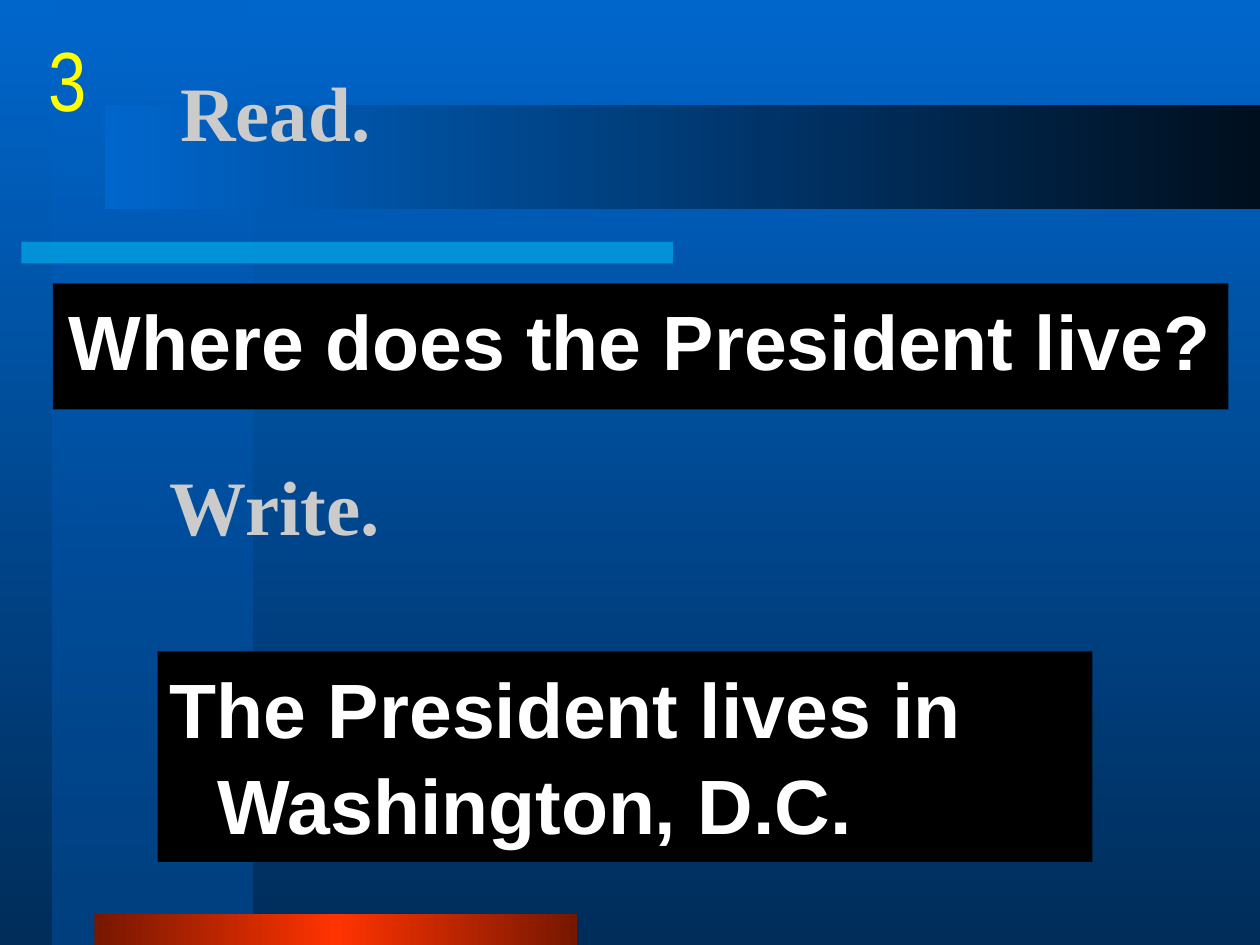
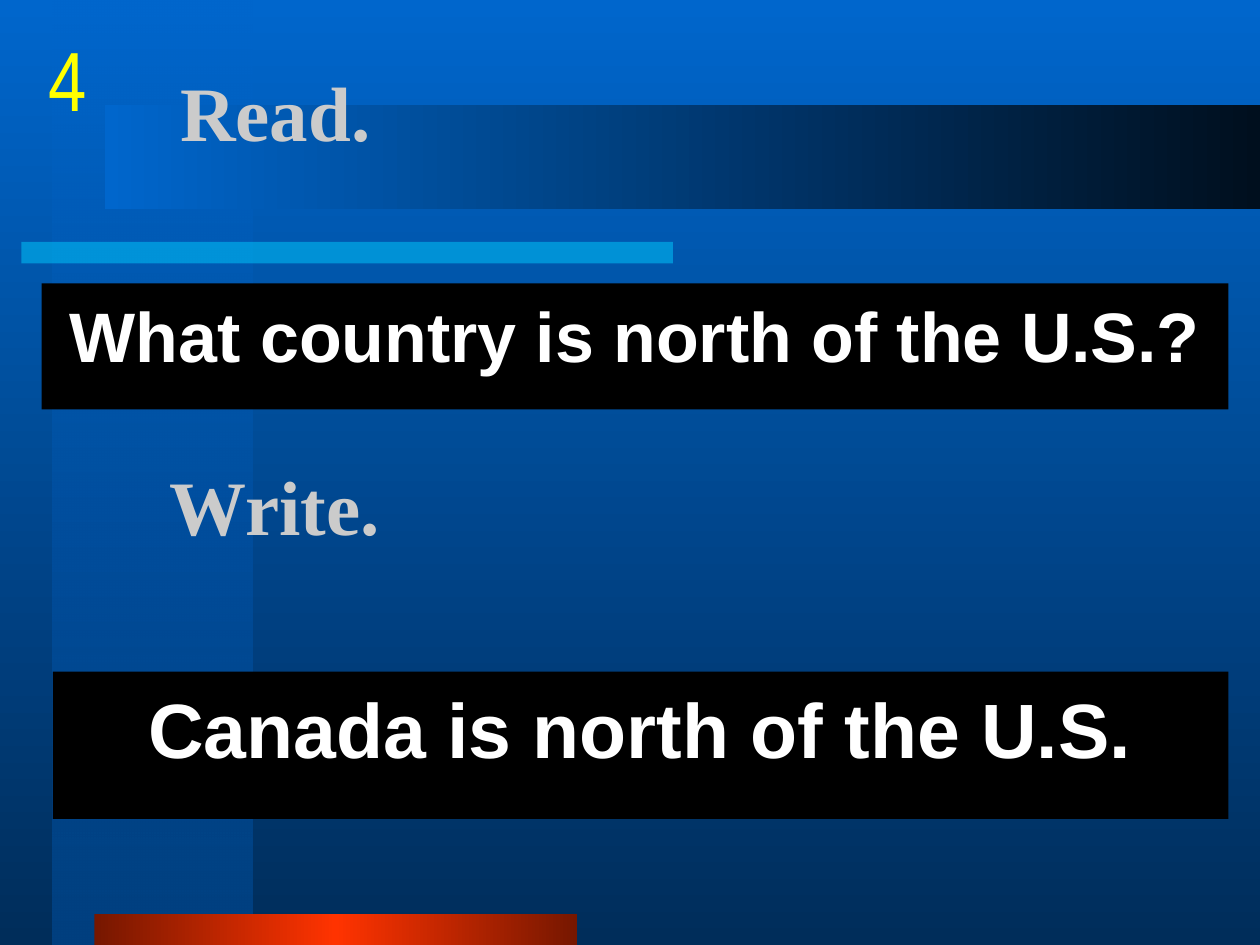
from dataclasses import dataclass

from lxml import etree
from pptx import Presentation
from pptx.dml.color import RGBColor
from pptx.dml.fill import FillFormat
from pptx.enum.shapes import MSO_SHAPE
from pptx.enum.text import MSO_ANCHOR, MSO_AUTO_SIZE, PP_ALIGN
from pptx.oxml.ns import qn
from pptx.shapes.autoshape import Shape
from pptx.slide import Slide, SlideLayout
from pptx.util import Inches, Pt

RECTANGLE = MSO_SHAPE.RECTANGLE
TOP, MIDDLE = MSO_ANCHOR.TOP, MSO_ANCHOR.MIDDLE
LEFT, CENTER = PP_ALIGN.LEFT, PP_ALIGN.CENTER
NO_AUTOFIT = MSO_AUTO_SIZE.NONE

BLUE = RGBColor(0x00, 0x66, 0xCC)
NAVY = RGBColor(0x00, 0x2D, 0x5A)
COLUMN_BLUE = RGBColor(0x00, 0x40, 0x80)
MIDNIGHT = RGBColor(0x00, 0x0F, 0x1E)
CYAN = RGBColor(0x00, 0xCC, 0xFF)
RED = RGBColor(0xFF, 0x33, 0x00)
DARK_RED = RGBColor(0x76, 0x17, 0x00)
BLACK = RGBColor(0x00, 0x00, 0x00)
WHITE = RGBColor(0xFF, 0xFF, 0xFF)
SILVER = RGBColor(0xCB, 0xCB, 0xCB)
YELLOW = RGBColor(0xFF, 0xFF, 0x00)

TITLE_ONLY = 5
HANGING_INDENT = Inches(0.38)


@dataclass(frozen=True)
class Area:
    left: float
    top: float
    width: float
    height: float

    def lengths(self) -> tuple[Inches, Inches, Inches, Inches]:
        return (Inches(self.left), Inches(self.top),
                Inches(self.width), Inches(self.height))


@dataclass(frozen=True)
class Band:
    area: Area
    colours: tuple[RGBColor, ...]
    angle: int = 0
    first_opacity: int = 100


@dataclass(frozen=True)
class TextStyle:
    font: str
    size: int
    colour: RGBColor
    bold: bool = True
    align: PP_ALIGN = LEFT
    anchor: MSO_ANCHOR = MIDDLE


@dataclass(frozen=True)
class Sentence:
    text: str
    area: Area
    size: int = 44
    align: PP_ALIGN = CENTER


@dataclass(frozen=True)
class Exercise:
    number: int
    question: Sentence
    answer: Sentence


BANDS = (
    Band(Area(0.42, 0, 1.58, 7.5), (BLUE, COLUMN_BLUE), 90, 50),
    Band(Area(0.17, 1.92, 5.17, 0.17), (CYAN,), first_opacity=50),
    Band(Area(0.75, 7.25, 3.83, 0.25), (DARK_RED, RED, DARK_RED)),
    Band(Area(0.83, 0.83, 9.17, 0.83), (BLUE, MIDNIGHT)),
)
READ_AREA = Area(1.33, 0.25, 8.5, 1.25)
WRITE_AREA = Area(1.25, 3.17, 8.5, 1.67)
NUMBER_AREA = Area(0.33, 0.2, 0.42, 0.83)
HEADING = TextStyle("Times New Roman", 44, SILVER)
NUMBER = TextStyle("Arial Narrow", 48, YELLOW, bold=False, align=CENTER)

EXERCISES = (
    Exercise(
        3,
        Sentence("Where does the President live?", Area(0.42, 2.25, 9.33, 1)),
        Sentence("The President lives in Washington, D.C.",
                 Area(1.25, 5.17, 7.42, 1.67), align=LEFT),
    ),
    Exercise(
        4,
        Sentence("What country is north of the U.S.?",
                 Area(0.33, 2.25, 9.42, 1), size=40),
        Sentence("Canada is north of the U.S.", Area(0.42, 5.33, 9.33, 1.17)),
    ),
)


def set_opacity(colour: etree._Element, percent: int) -> None:
    etree.SubElement(colour, qn("a:alpha"), val=str(percent * 1000))


def set_gradient(fill: FillFormat, owner: etree._Element,
                 colours: tuple[RGBColor, ...], angle: int) -> None:
    """Spread the colours evenly; the angle runs clockwise from the left."""
    fill.gradient()
    fill.gradient_angle = -angle % 360
    stops = owner.find(".//" + qn("a:gsLst"))
    for stop in list(stops):
        stops.remove(stop)
    for index, colour in enumerate(colours):
        position = index * 100000 // (len(colours) - 1)
        stop = etree.SubElement(stops, qn("a:gs"), pos=str(position))
        etree.SubElement(stop, qn("a:srgbClr"), val=str(colour))


def add_rectangle(slide: Slide, area: Area) -> Shape:
    shape = slide.shapes.add_shape(RECTANGLE, *area.lengths())
    shape.shadow.inherit = False
    shape.line.fill.background()
    return shape


def add_band(slide: Slide, band: Band) -> Shape:
    shape = add_rectangle(slide, band.area)
    if len(band.colours) == 1:
        shape.fill.solid()
        shape.fill.fore_color.rgb = band.colours[0]
    else:
        set_gradient(shape.fill, shape.element, band.colours, band.angle)
    if band.first_opacity < 100:
        set_opacity(shape.element.find(".//" + qn("a:srgbClr")), band.first_opacity)
    return shape


def decorate_layout(layout: SlideLayout, slide: Slide) -> None:
    """Draw the bands on a slide, then move them behind the layout's content."""
    set_gradient(layout.background.fill, layout.element, (BLUE, NAVY), 90)
    for position, band in enumerate(BANDS, start=2):
        layout.shapes.element.insert(position, add_band(slide, band).element)


def write_text(shape: Shape, text: str, style: TextStyle, wrap: bool = True) -> None:
    frame = shape.text_frame
    frame.text = text
    frame.word_wrap = wrap
    frame.auto_size = NO_AUTOFIT
    frame.vertical_anchor = style.anchor
    para = frame.paragraphs[0]
    para.alignment = style.align
    font = para.runs[0].font
    font.name = style.font
    font.size = Pt(style.size)
    font.bold = style.bold
    font.color.rgb = style.colour


def add_label(slide: Slide, text: str, area: Area, style: TextStyle,
              wrap: bool = True) -> None:
    write_text(slide.shapes.add_textbox(*area.lengths()), text, style, wrap)


def add_sentence(slide: Slide, sentence: Sentence) -> None:
    box = add_rectangle(slide, sentence.area)
    box.fill.solid()
    box.fill.fore_color.rgb = BLACK
    style = TextStyle("Arial", sentence.size, WHITE, align=sentence.align, anchor=TOP)
    write_text(box, sentence.text, style)
    para = box.text_frame.paragraphs[0]
    para.line_spacing = 1.04
    para.space_before = Pt(2)
    properties = para._p.get_or_add_pPr()
    properties.set("marL", str(HANGING_INDENT))
    properties.set("indent", str(-HANGING_INDENT))


def fill_slide(slide: Slide, exercise: Exercise) -> None:
    title = slide.shapes.title
    title.left, title.top, title.width, title.height = READ_AREA.lengths()
    write_text(title, "Read.", HEADING)
    add_sentence(slide, exercise.question)
    add_label(slide, "Write.", WRITE_AREA, HEADING)
    add_sentence(slide, exercise.answer)
    add_label(slide, str(exercise.number), NUMBER_AREA, NUMBER, wrap=False)


def main() -> None:
    deck = Presentation()
    deck.slide_width, deck.slide_height = Inches(10), Inches(7.5)
    layout = deck.slide_layouts[TITLE_ONLY]
    slides = [deck.slides.add_slide(layout) for _ in EXERCISES]
    decorate_layout(layout, slides[0])
    for slide, exercise in zip(slides, EXERCISES):
        fill_slide(slide, exercise)
    deck.save("out.pptx")


if __name__ == "__main__":
    main()
